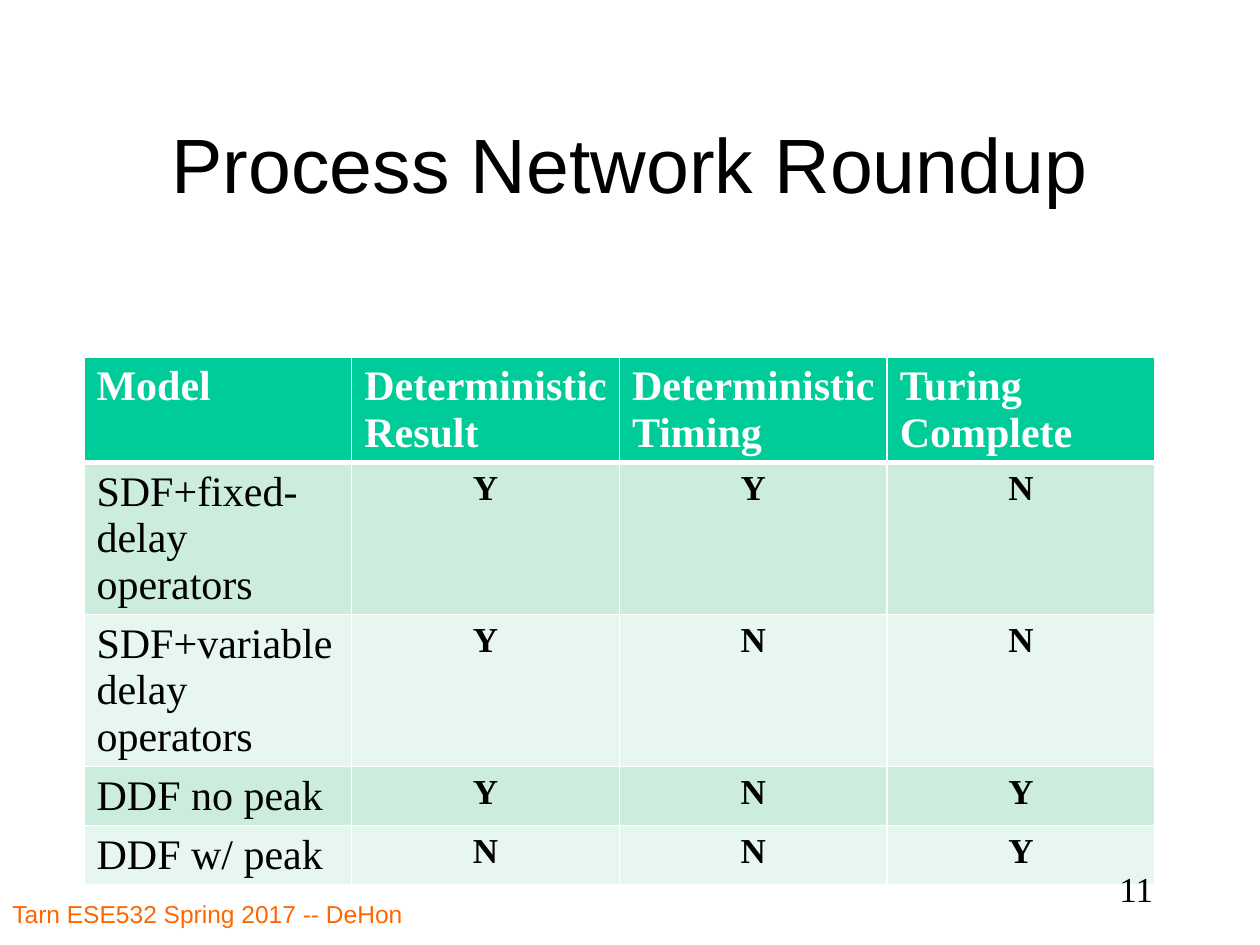
from dataclasses import dataclass

import pptx
import pptx.dml.color
import pptx.enum.text
import pptx.oxml.ns
import pptx.util
from lxml import etree

Pt = pptx.util.Pt
Align = pptx.enum.text.PP_ALIGN
Anchor = pptx.enum.text.MSO_ANCHOR


@dataclass(frozen=True)
class Theme:
    sans: str = "Arial"
    serif: str = "Times New Roman"
    black: str = "000000"
    white: str = "FFFFFF"
    orange: str = "FF6600"
    header: str = "00CC99"
    bands: tuple[str, str] = ("CCECDE", "E7F6EF")
    title_size: float = 44
    label_size: float = 24
    answer_size: float = 20
    footer_size: float = 14
    thin_line: float = 1
    thick_line: float = 3


THEME = Theme()


@dataclass(frozen=True)
class TextStyle:
    font: str
    size: float
    color: str
    bold: bool = False
    align: Align = Align.LEFT


@dataclass(frozen=True)
class Label:
    text: str
    left: float
    top: float
    width: float
    height: float
    style: TextStyle
    anchor: Anchor = Anchor.TOP


# Text styles of the table
HEADER_STYLE = TextStyle(THEME.serif, THEME.label_size, THEME.white, bold=True)
MODEL_STYLE = TextStyle(THEME.serif, THEME.label_size, THEME.black)
ANSWER_STYLE = TextStyle(THEME.serif, THEME.answer_size, THEME.black, True, Align.CENTER)

# Content
LABELS = (
    Label("Process Network Roundup", 54, 48, 612, 90,
          TextStyle(THEME.sans, THEME.title_size, THEME.black, align=Align.CENTER),
          Anchor.MIDDLE),
    Label("Tarn ESE532 Spring 2017 -- DeHon", 0, 510, 330, 30,
          TextStyle(THEME.sans, THEME.footer_size, THEME.orange)),
    Label("11", 516, 492, 150, 36,
          TextStyle(THEME.serif, THEME.answer_size, THEME.black, align=Align.RIGHT)),
)
ROWS = (
    ("Model", "Deterministic\nResult", "Deterministic Timing", "Turing Complete"),
    ("SDF+fixed-delay operators", "Y", "Y", "N"),
    ("SDF+variable delay operators", "Y", "N", "N"),
    ("DDF no peak", "Y", "N", "Y"),
    ("DDF w/ peak", "N", "N", "Y"),
)
TABLE_LEFT, TABLE_TOP, TABLE_WIDTH, TABLE_HEIGHT = 48, 204, 612, 214
ROW_HEIGHT = 29.5


def write_text(frame, text: str, style: TextStyle) -> None:
    frame.text = text
    font_values = {"name": style.font, "size": Pt(style.size), "bold": style.bold}
    for paragraph in frame.paragraphs:
        paragraph.alignment = style.align
        for run in paragraph.runs:
            for name, value in font_values.items():
                setattr(run.font, name, value)
            run.font.color.rgb = pptx.dml.color.RGBColor.from_string(style.color)


def add_label(slide, label: Label) -> None:
    box = slide.shapes.add_textbox(
        Pt(label.left), Pt(label.top), Pt(label.width), Pt(label.height))
    box.text_frame.word_wrap = True
    box.text_frame.vertical_anchor = label.anchor
    write_text(box.text_frame, label.text, label.style)


def set_borders(cell, widths: dict[str, float]) -> None:
    qn = pptx.oxml.ns.qn
    properties = cell._tc.get_or_add_tcPr()
    for side, width in widths.items():
        line = etree.SubElement(properties, qn(f"a:ln{side}"), w=str(int(Pt(width))))
        fill = etree.SubElement(line, qn("a:solidFill"))
        etree.SubElement(fill, qn("a:srgbClr"), val=THEME.white)


def format_cell(cell, text: str, row: int, column: int) -> None:
    if row == 0:
        style, color = HEADER_STYLE, THEME.header
    else:
        style = MODEL_STYLE if column == 0 else ANSWER_STYLE
        color = THEME.bands[(row - 1) % 2]
    write_text(cell.text_frame, text, style)
    # Borders come before the fill in the cell properties
    set_borders(cell, {
        "L": THEME.thin_line,
        "R": THEME.thin_line,
        "T": THEME.thick_line if row == 1 else THEME.thin_line,
        "B": THEME.thick_line if row == 0 else THEME.thin_line,
    })
    cell.fill.solid()
    cell.fill.fore_color.rgb = pptx.dml.color.RGBColor.from_string(color)


def add_model_table(slide) -> None:
    table = slide.shapes.add_table(
        len(ROWS), len(ROWS[0]), Pt(TABLE_LEFT), Pt(TABLE_TOP),
        Pt(TABLE_WIDTH), Pt(TABLE_HEIGHT)).table
    for row, texts in enumerate(ROWS):
        table.rows[row].height = Pt(ROW_HEIGHT)
        for column, text in enumerate(texts):
            format_cell(table.cell(row, column), text, row, column)


def main() -> None:
    presentation = pptx.Presentation()
    presentation.slide_width, presentation.slide_height = Pt(720), Pt(540)
    slide = presentation.slides.add_slide(presentation.slide_layouts[6])

    # Table first, so that the page number lies over it
    add_model_table(slide)
    for label in LABELS:
        add_label(slide, label)

    presentation.save("out.pptx")


if __name__ == "__main__":
    main()
